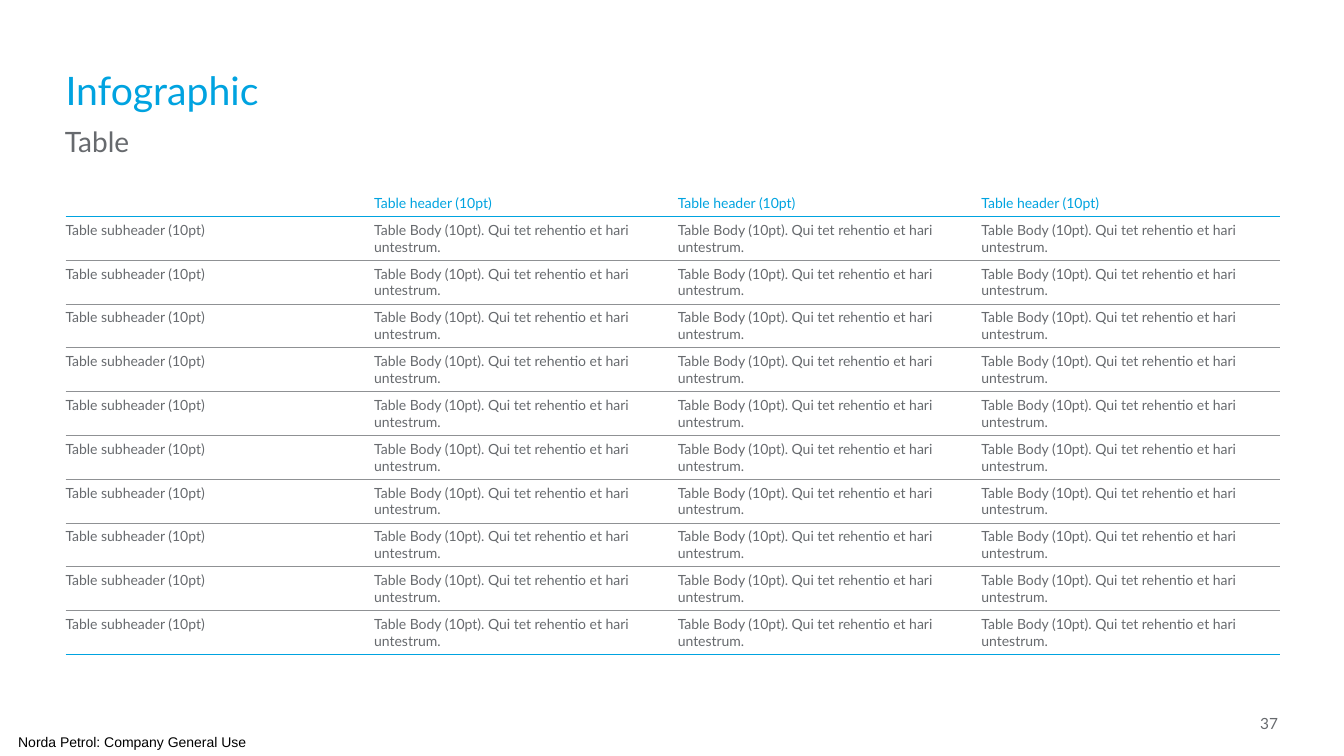
from lxml.etree import SubElement
from pptx import Presentation
from pptx.dml.color import RGBColor
from pptx.enum.text import MSO_ANCHOR as Anchor, PP_ALIGN as Align
from pptx.oxml.ns import qn
from pptx.util import Pt

BLUE, GREY, RULE, BLACK = "00A3E0", "676A6E", "8F9194", "000000"
BODY_ROWS, COLUMNS = 10, 4
HEADER_HEIGHT, BODY_HEIGHT, COLUMN_WIDTH = 26.5, 31.28, 216.9


def color(value):
    return RGBColor.from_string(value)


class Page:
    """Holds the current slide and its text style."""

    font = "Lato"
    rule_width = 0.75

    def __init__(self, deck):
        self.slide = deck.slides.add_slide(deck.slide_layouts[6])

    def add_span(self, para, text, size, ink, font=None):
        span = para.add_run()
        span.text = text
        for name, value in {"size": Pt(size), "name": font or self.font}.items():
            setattr(span.font, name, value)
        span.font.color.rgb = color(ink)

    def margins(self, holder, sizes):
        for side, size in zip(("left", "top", "right", "bottom"), sizes):
            setattr(holder, f"margin_{side}", Pt(size))

    def text(self, place, text, size, ink, font=None, inset=(0, 3.6, 0, 3.6),
             anchor=Anchor.TOP, align=Align.LEFT, before=0):
        box = self.slide.shapes.add_textbox(*map(Pt, place))
        frame = box.text_frame
        frame.word_wrap = True
        frame.vertical_anchor = anchor
        self.margins(frame, inset)
        para = frame.paragraphs[0]
        for name, value in {"alignment": align, "space_before": Pt(before)}.items():
            setattr(para, name, value)
        self.add_span(para, text, size, ink, font)

    def border(self, cell, side, ink):
        line = SubElement(cell._tc.get_or_add_tcPr(), qn(f"a:ln{side}"),
                          w=str(Pt(self.rule_width)))
        if ink:
            fill = SubElement(line, qn("a:solidFill"))
            SubElement(fill, qn("a:srgbClr"), val=ink)
        else:
            SubElement(line, qn("a:noFill"))

    def cell(self, cell, text, ink, left, anchor, top_rule, bottom_rule):
        self.margins(cell, (left, 3.6, 3.6, 3.6))
        cell.vertical_anchor = anchor
        para = cell.text_frame.paragraphs[0]
        if text:
            self.add_span(para, text, 10, ink)
        else:
            SubElement(para._p, qn("a:endParaRPr"), sz="1000")
        rules = {"L": None, "R": None, "T": top_rule, "B": bottom_rule}
        for side, rule in rules.items():
            self.border(cell, side, rule)
        cell.fill.background()

    def table(self, left, top, rows, heights, column_width):
        count = len(rows[0])
        place = (left, top, column_width * count, sum(heights))
        table = self.slide.shapes.add_table(len(rows), count, *map(Pt, place)).table
        table.first_row = table.horz_banding = False
        for column in table.columns:
            column.width = Pt(column_width)
        # Blue rules under the header and the last row, grey between
        rules = [None, BLUE] + [RULE] * (len(rows) - 2) + [BLUE]
        for r, (texts, height) in enumerate(zip(rows, heights)):
            table.rows[r].height = Pt(height)
            ink, anchor = (GREY, Anchor.TOP) if r else (BLUE, Anchor.BOTTOM)
            for c, text in enumerate(texts):
                self.cell(table.cell(r, c), text, ink, 3.6 if c else 0, anchor,
                          rules[r], rules[r + 1])


def main():
    deck = Presentation()
    deck.slide_width, deck.slide_height = Pt(960), Pt(540)
    page = Page(deck)

    # Footer
    page.text((884.9, 507.6, 28, 18), "37", 11, GREY,
              anchor=Anchor.MIDDLE, align=Align.RIGHT)
    page.text((0, 520.5, 196, 19.5), "Norda Petrol: Company General Use", 10, BLACK,
              font="Arial", inset=(13, 0, 0, 0), anchor=Anchor.MIDDLE)

    # Table
    header = [""] + ["Table header (10pt)"] * (COLUMNS - 1)
    sentence = "Table Body (10pt). Qui tet rehentio et hari untestrum."
    body = ["Table subheader (10pt)"] + [sentence] * (COLUMNS - 1)
    page.table(46.8, 128.2, [header] + [body] * BODY_ROWS,
               [HEADER_HEIGHT] + [BODY_HEIGHT] * BODY_ROWS, COLUMN_WIDTH)

    # Headings
    page.text((46.8, 43.9, 356.4, 41), "Infographic", 28, BLUE, before=6)
    page.text((39.2, 85.7, 356.4, 41), "Table", 20, GREY,
              inset=(7.2, 3.6, 7.2, 3.6), before=6)

    deck.save("out.pptx")


if __name__ == "__main__":
    main()
